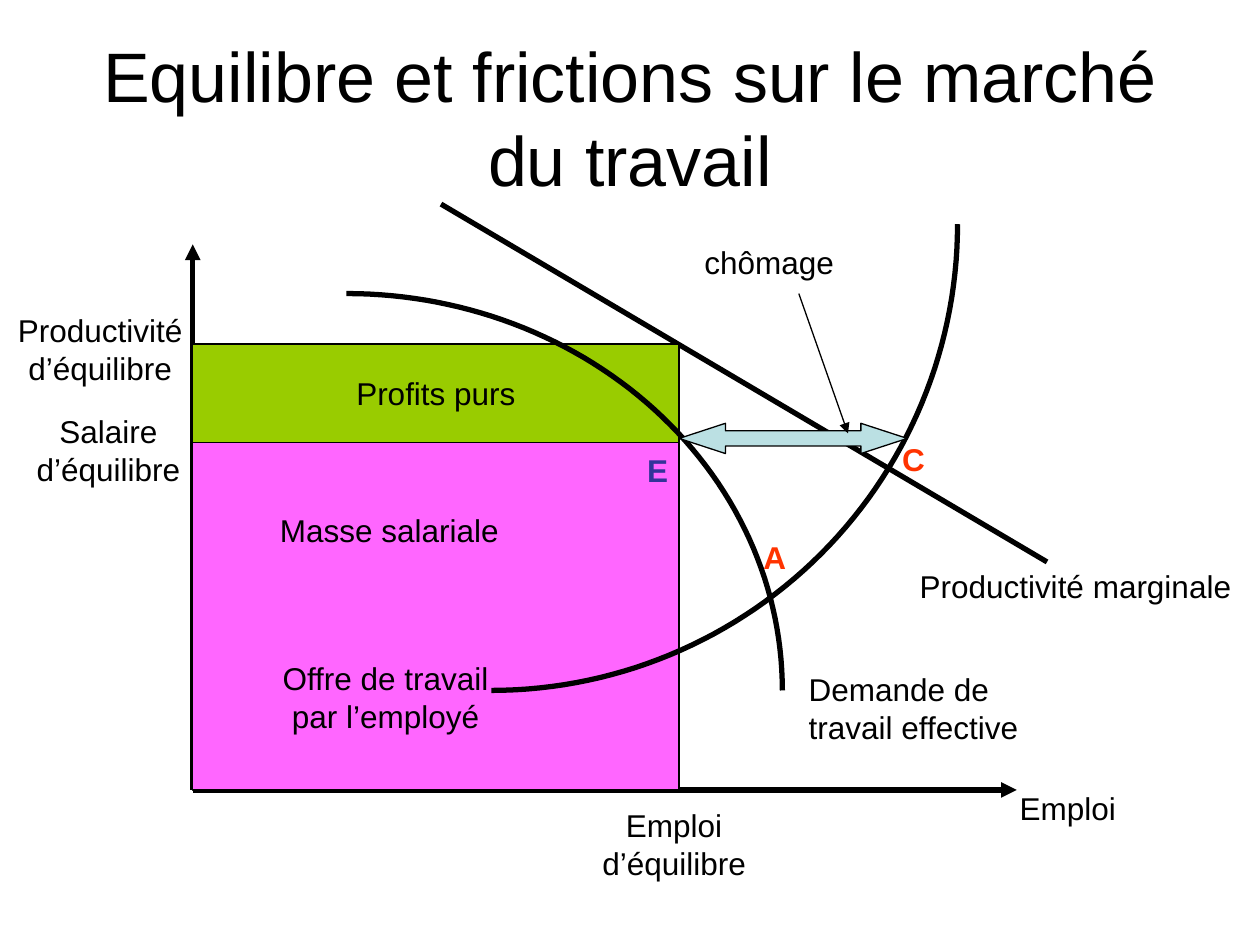
import math
from dataclasses import dataclass

from lxml import etree
from pptx import Presentation
from pptx import util as u
from pptx.dml.color import RGBColor
from pptx.enum import shapes, text
from pptx.oxml.ns import qn


@dataclass(frozen=True)
class Theme:
    font: str = "Arial"
    ink: str = "000000"
    profit: str = "99CC00"
    wages: str = "FF66FF"
    gap: str = "BBE0E3"
    point: str = "FF3300"
    equilibrium: str = "333399"
    title_size: int = 40
    label_size: int = 18
    thick: float = 3
    thin: float = 0.75


THEME = Theme()
CENTER = text.PP_ALIGN.CENTER


def write(frame, wording, size=THEME.label_size, color=THEME.ink, bold=False,
          align=CENTER, anchor=text.MSO_ANCHOR.TOP, wrap=False):
    frame.word_wrap = wrap
    frame.vertical_anchor = anchor
    frame.text = wording
    for paragraph in frame.paragraphs:
        paragraph.alignment = align
        font = paragraph.font
        font.name, font.size, font.bold = THEME.font, u.Pt(size), bold
        font.color.rgb = RGBColor.from_string(color)


class Diagram:
    def __init__(self, slide, theme):
        self.shapes = slide.shapes
        self.theme = theme

    def stroke(self, item, width):
        item.line.color.rgb = RGBColor.from_string(self.theme.ink)
        item.line.width = u.Pt(width)

    def label(self, wording, left, top, width, height, grow=True, **style):
        box = self.shapes.add_textbox(*map(u.Inches, (left, top, width, height)))
        write(box.text_frame, wording, **style)
        if grow:
            box.text_frame.auto_size = text.MSO_AUTO_SIZE.SHAPE_TO_FIT_TEXT

    def area(self, left, top, width, height, fill, kind=shapes.MSO_SHAPE.RECTANGLE):
        area = self.shapes.add_shape(kind, *map(u.Inches, (left, top, width, height)))
        area.shadow.inherit = False
        area.fill.solid()
        area.fill.fore_color.rgb = RGBColor.from_string(fill)
        self.stroke(area, self.theme.thin)
        return area

    def line(self, start, end, width, arrow=False):
        line = self.shapes.add_connector(
            shapes.MSO_CONNECTOR.STRAIGHT, *map(u.Inches, (*start, *end)))
        self.stroke(line, width)
        properties = line.element.spPr
        if arrow:
            etree.SubElement(properties.find(qn("a:ln")), qn("a:tailEnd"), type="triangle")
        etree.SubElement(properties, qn("a:effectLst"))

    def quarter_ellipse(self, center_x, center_y, radius_x, radius_y, steps=60):
        angles = [math.pi / 2 * step / steps for step in range(steps + 1)]
        points = [(u.Inches(center_x + radius_x * math.sin(angle)),
                   u.Inches(center_y + radius_y * math.cos(angle))) for angle in angles]
        builder = self.shapes.build_freeform(*points[0])
        builder.add_line_segments(points[1:], close=False)
        curve = builder.convert_to_shape()
        curve.shadow.inherit = False
        curve.fill.background()
        self.stroke(curve, self.theme.thick)


def main():
    deck = Presentation()
    deck.slide_width, deck.slide_height = u.Inches(10), u.Inches(7.5)
    diagram = Diagram(deck.slides.add_slide(deck.slide_layouts[6]), THEME)

    origin_x, origin_y = 1.53, 6.27
    employment, productivity, wage = 5.39, 2.73, 3.51
    one_line, two_lines = 0.4, 0.7
    middle = text.MSO_ANCHOR.MIDDLE

    diagram.label("Equilibre et frictions sur le marché du travail", 0.5, 0.3, 9, 1.25,
                  grow=False, size=THEME.title_size, anchor=middle, wrap=True)

    for axis_end in ((origin_x, 1.94), (8.07, origin_y)):
        diagram.line((origin_x, origin_y), axis_end, THEME.thick, arrow=True)
    diagram.label("Demande de\ntravail effective", 6.32, 5.27, 1.87, two_lines,
                  align=text.PP_ALIGN.LEFT)
    diagram.label("Productivité marginale", 7.2, 4.45, 2.67, one_line,
                  align=text.PP_ALIGN.LEFT)
    diagram.line((3.5, 1.62), (8.31, 4.46), THEME.thick)

    width = employment - origin_x
    profits = diagram.area(origin_x, productivity, width, wage - productivity, THEME.profit)
    write(profits.text_frame, "Profits purs", anchor=middle)
    diagram.area(origin_x, wage, width, origin_y - wage, THEME.wages)

    diagram.quarter_ellipse(3.9, 1.78, 3.7, 3.7)
    diagram.quarter_ellipse(2.75, 5.48, 3.46, -3.15)
    diagram.label("Offre de travail\npar l’employé", 2.14, 5.18, 1.84, two_lines)

    unemployment = diagram.area(employment, 3.36, 1.81, 0.24, THEME.gap,
                                shapes.MSO_SHAPE.LEFT_RIGHT_ARROW)
    unemployment.adjustments[0] = 0.5
    unemployment.adjustments[1] = 1.53
    diagram.label("chômage", 5.49, 1.88, 1.23, one_line)
    diagram.line((6.34, 2.33), (6.73, 3.44), THEME.thin, arrow=True)

    for wording, left, top, label_width, height in (
        ("Masse salariale", 2.12, 4.01, 1.94, one_line),
        ("Salaire\nd’équilibre", 0.19, 3.22, 1.34, two_lines),
        ("Emploi\nd’équilibre", 4.68, 6.35, 1.34, two_lines),
        ("Emploi", 7.99, 6.21, 0.97, one_line),
        ("Productivité\nd’équilibre", 0.04, 2.42, 1.51, two_lines),
    ):
        diagram.label(wording, left, top, label_width, height)

    for letter, left, top, color in (
        ("C", 7.06, 3.44, THEME.point),
        ("A", 5.96, 4.22, THEME.point),
        ("E", 5.03, 3.53, THEME.equilibrium),
    ):
        diagram.label(letter, left, top, 0.38, one_line, color=color, bold=True)

    deck.save("out.pptx")


if __name__ == "__main__":
    main()
